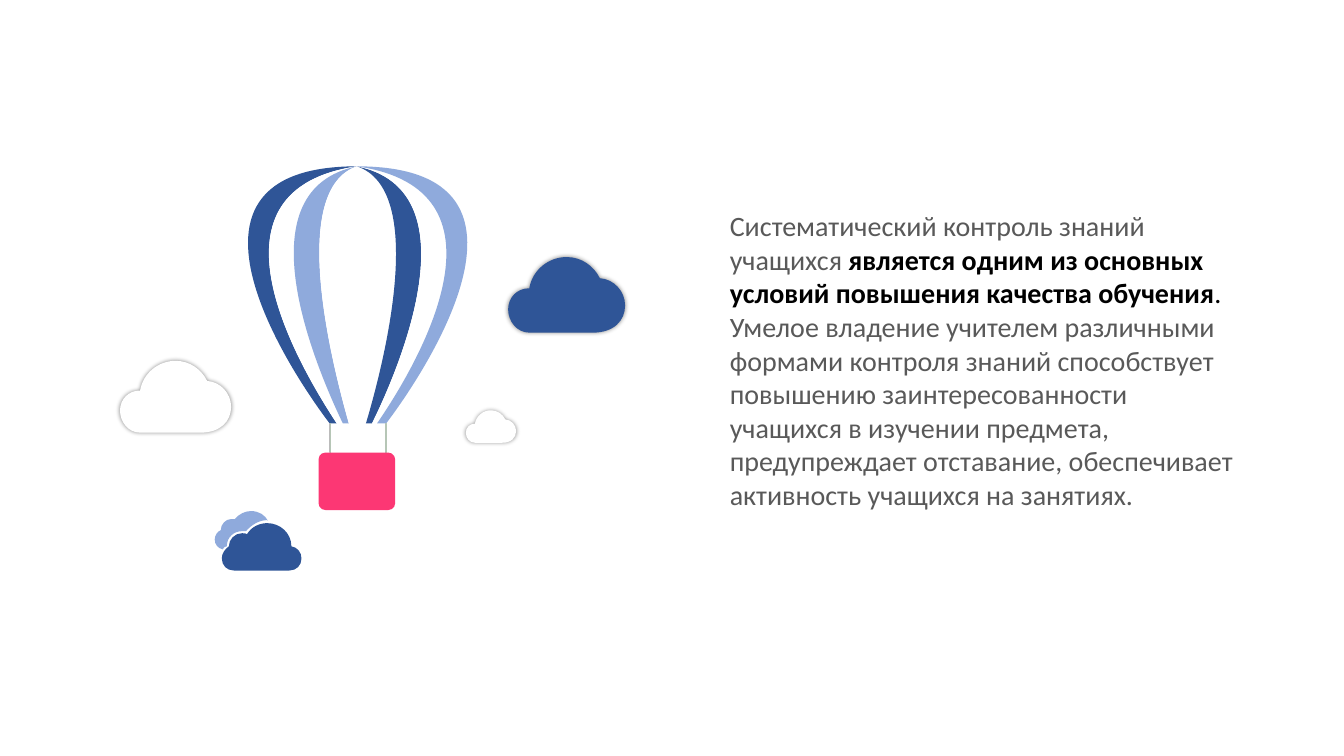
from dataclasses import dataclass
from itertools import pairwise

from lxml.etree import SubElement
from pptx import Presentation
from pptx.dml.color import RGBColor
from pptx.enum.shapes import MSO_SHAPE as Preset
from pptx.oxml.ns import qn
from pptx.util import Inches, Pt


@dataclass(frozen=True)
class Theme:
    dark: RGBColor = RGBColor(0x2F, 0x55, 0x97)
    light: RGBColor = RGBColor(0x8F, 0xAA, 0xDC)
    white: RGBColor = RGBColor(0xFF, 0xFF, 0xFF)
    basket: RGBColor = RGBColor(0xFC, 0x37, 0x74)
    rope: RGBColor = RGBColor(0x40, 0x40, 0x40)
    rope_edge: RGBColor = RGBColor(0xB6, 0xC6, 0xB6)
    text: RGBColor = RGBColor(0x59, 0x59, 0x59)
    strong: RGBColor = RGBColor(0x00, 0x00, 0x00)
    font: str = "Calibri"
    size: Pt = Pt(20)


theme = Theme()


def paint(shape, color):
    shape.fill.solid()
    shape.fill.fore_color.rgb = color
    shape.line.fill.background()
    shape.shadow.inherit = False


def add_curve(shapes, points, color):
    corners = [(Inches(x), Inches(y)) for x, y in points]
    builder = shapes.build_freeform(*corners[0])
    builder.add_line_segments(corners[1:], close=True)
    shape = builder.convert_to_shape()
    segments = list(shape.element.iter(qn("a:lnTo")))
    for first, second, third in zip(segments[::3], segments[1::3], segments[2::3]):
        curve = first.makeelement(qn("a:cubicBezTo"))
        first.addprevious(curve)
        for segment in (first, second, third):
            curve.append(segment[0])
            segment.getparent().remove(segment)
    paint(shape, color)
    return shape


presentation = Presentation()
presentation.slide_width = Inches(13.33)
presentation.slide_height = Inches(7.5)
slide = presentation.slides.add_slide(presentation.slide_layouts[6])

balloon = slide.shapes.add_group_shape()
crown = (3.54, 1.65)
seams = [
    [(1.28, 1.65), (3.27, 4.2), (3.27, 4.2)],
    [(1.98, 1.88), (2.9, 3.53), (3.34, 4.2)],
    [(2.42, 1.88), (3.08, 3.53), (3.4, 4.2)],
    [(2.87, 1.88), (3.27, 3.53), (3.46, 4.2)],
    [(3.54, 1.88), (3.54, 3.53), (3.54, 4.2)],
    [(4.23, 1.88), (3.83, 3.53), (3.63, 4.2)],
    [(4.67, 1.88), (4.02, 3.53), (3.69, 4.2)],
    [(5.12, 1.88), (4.2, 3.53), (3.74, 4.2)],
    [(5.82, 1.65), (3.83, 4.2), (3.83, 4.2)],
]
panel_colors = [theme.dark, theme.white, theme.light, theme.white,
                theme.white, theme.dark, theme.white, theme.light]
for (left, right), color in zip(pairwise(seams), panel_colors):
    hem = [right[-1]] * 3
    add_curve(balloon.shapes, [crown, *left, *hem, right[1], right[0], crown], color)

for x in (3.27, 3.82):
    rope = balloon.shapes.add_shape(Preset.RECTANGLE, Inches(x), Inches(4.2), Inches(0.01), Inches(0.29))
    paint(rope, theme.rope)
    rope.line.color.rgb = theme.rope_edge
    rope.line.width = Pt(0.25)

basket = balloon.shapes.add_shape(
    Preset.ROUNDED_RECTANGLE, Inches(3.16), Inches(4.49), Inches(0.76), Inches(0.57))
basket.adjustments[0] = 0.12
paint(basket, theme.basket)

cloud_points = [
    (0.91, 0.21),
    (0.85, 0.09), (0.73, 0), (0.58, 0),
    (0.4, 0), (0.24, 0.13), (0.21, 0.31),
    (0.09, 0.31), (0, 0.4), (0, 0.52),
    (0, 0.64), (0.09, 0.75), (0.21, 0.75),
    (0.21, 0.75), (0.84, 0.75), (0.84, 0.75),
    (1.05, 0.75), (1.16, 0.63), (1.16, 0.48),
    (1.16, 0.34), (1.05, 0.22), (0.91, 0.21),
]
for left, top, scale, color in [
    (4.62, 4.07, 0.43, theme.white),
    (5.04, 2.55, 1, theme.dark),
    (1.19, 3.58, 0.95, theme.white),
]:
    points = [(left + scale * x, top + scale * y) for x, y in cloud_points]
    cloud = add_curve(slide.shapes, points, color)
    effects = cloud.element.spPr.find(qn("a:effectLst"))
    shadow = SubElement(effects, qn("a:outerShdw"), blurRad=str(Pt(3)), dist="0", dir="0")
    shadow_color = SubElement(shadow, qn("a:srgbClr"), val=str(theme.strong))
    SubElement(shadow_color, qn("a:alpha"), val="40000")

cloud_pair = slide.shapes.add_group_shape()
back_cloud = [
    (2.25, 5.42),
    (2.25, 5.33), (2.32, 5.27), (2.4, 5.27),
    (2.41, 5.27), (2.43, 5.27), (2.44, 5.27),
    (2.49, 5.21), (2.57, 5.16), (2.65, 5.16),
    (2.66, 5.16), (2.66, 5.17), (2.66, 5.17),
    (2.63, 5.11), (2.57, 5.07), (2.49, 5.07),
    (2.43, 5.07), (2.37, 5.1), (2.33, 5.15),
    (2.32, 5.15), (2.31, 5.15), (2.29, 5.15),
    (2.24, 5.15), (2.19, 5.2), (2.19, 5.26),
    (2.16, 5.27), (2.13, 5.31), (2.13, 5.35),
    (2.13, 5.4), (2.16, 5.44), (2.21, 5.45),
    (2.22, 5.43), (2.23, 5.42), (2.25, 5.42),
]
front_cloud = [
    (2.89, 5.42),
    (2.89, 5.29), (2.78, 5.19), (2.65, 5.19),
    (2.57, 5.19), (2.49, 5.23), (2.45, 5.3),
    (2.44, 5.29), (2.42, 5.29), (2.4, 5.29),
    (2.33, 5.29), (2.27, 5.35), (2.27, 5.42),
    (2.23, 5.45), (2.2, 5.49), (2.2, 5.54),
    (2.2, 5.61), (2.25, 5.66), (2.32, 5.66),
    (2.32, 5.66), (2.87, 5.66), (2.87, 5.66),
    (2.94, 5.66), (2.99, 5.61), (2.99, 5.54),
    (2.99, 5.48), (2.95, 5.43), (2.89, 5.42),
]
add_curve(cloud_pair.shapes, back_cloud, theme.light)
add_curve(cloud_pair.shapes, front_cloud, theme.dark)

text_box = slide.shapes.add_textbox(Inches(7.14), Inches(2.02), Inches(5.27), Inches(3.13))
text_box.text_frame.word_wrap = True
paragraph = text_box.text_frame.paragraphs[0]
paragraph.font.name = theme.font
paragraph.font.size = theme.size
for text, color, bold in [
    ("Систематический контроль знаний учащихся ", theme.text, False),
    ("является одним из основных условий повышения качества обучения", theme.strong, True),
    (". ", theme.strong, False),
    ("Умелое владение учителем различными формами контроля знаний способствует "
     "повышению заинтересованности учащихся в изучении предмета, предупреждает "
     "отставание, обеспечивает активность учащихся на занятиях.", theme.text, False),
]:
    run = paragraph.add_run()
    run.text = text
    run.font.color.rgb = color
    run.font.bold = bold

presentation.save("out.pptx")
